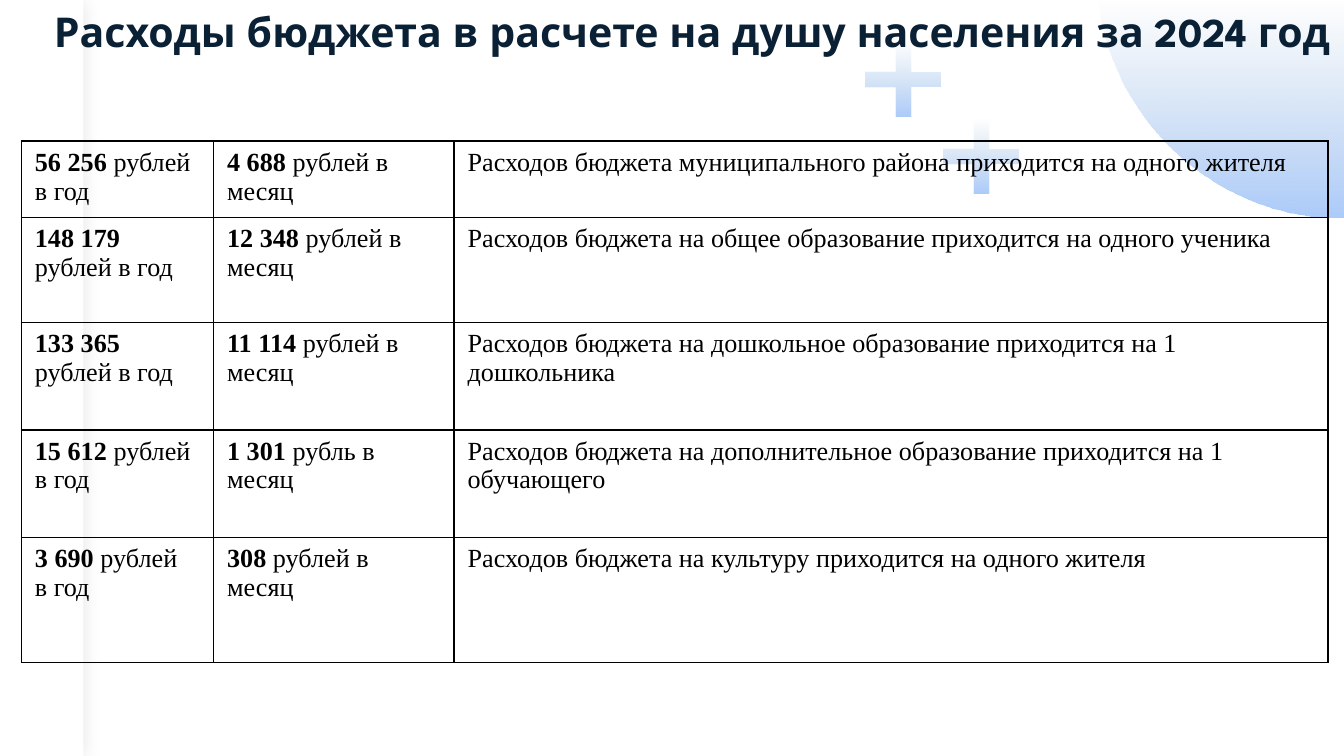
"""Build a slide with a table of budget spending per person for 2024."""
from lxml.etree import SubElement
from pptx import Presentation
from pptx.dml.color import RGBColor
from pptx.enum.shapes import MSO_SHAPE
from pptx.enum.text import MSO_ANCHOR, PP_ALIGN
from pptx.oxml.ns import qn
from pptx.util import Inches, Pt

WHITE = RGBColor(0xFF, 0xFF, 0xFF)
BLACK = RGBColor(0x00, 0x00, 0x00)
NAVY = RGBColor(0x0A, 0x20, 0x35)
PALE_BLUE = RGBColor(0xB4, 0xCC, 0xE7)
SKY_BLUE = RGBColor(0xAC, 0xCB, 0xF9)

ROWS = [
    ("56 256 ", "рублей в год", "4 688 ", "рублей в месяц",
     "Расходов бюджета муниципального района приходится на одного жителя"),
    ("148 179 ", "рублей в год", "12 348 ", "рублей в месяц",
     "Расходов бюджета на общее образование приходится на одного ученика"),
    ("133 365 ", "рублей в год", "11 114 ", "рублей в месяц",
     "Расходов бюджета на дошкольное образование приходится на 1 дошкольника"),
    ("15 612 ", "рублей\nв год", "1 301 ", "рубль в месяц",
     "Расходов бюджета на дополнительное образование приходится на 1 обучающего"),
    ("3 690 ", "рублей\nв год", "308", " рублей в месяц",
     "Расходов бюджета на культуру приходится на одного жителя"),
]
COLUMN_WIDTHS = [1.43, 1.79, 6.5]
ROW_HEIGHTS = [0.57, 0.78, 0.8, 0.8, 0.93]


def fade_in(shape):
    """Fill a shape with blue that fades in from top to bottom."""
    shape.shadow.inherit = False
    shape.line.fill.background()
    shape.fill.gradient()
    shape.fill.gradient_angle = 270
    for stop, color, position in zip(shape.fill.gradient_stops, (PALE_BLUE, SKY_BLUE), (0, 1)):
        stop.color.rgb = color
        stop.position = position
    first_color = next(shape._element.spPr.iter(qn("a:srgbClr")))
    SubElement(first_color, qn("a:alpha"), val="0")


def format_cell(cell, parts):
    """Write (text, bold) parts into a cell and draw its borders."""
    cell.fill.background()
    paragraph = cell.text_frame.paragraphs[0]
    for text, bold in parts:
        for index, line in enumerate(text.split("\n")):
            if index:
                paragraph = cell.text_frame.add_paragraph()
            run = paragraph.add_run()
            run.text = line
            run.font.bold = bold
    for paragraph in cell.text_frame.paragraphs:
        paragraph.font.name = "Times New Roman"
        paragraph.font.size = Pt(14)
        paragraph.font.color.rgb = BLACK
    properties = cell._tc.get_or_add_tcPr()
    for index, side in enumerate(("lnL", "lnR", "lnT", "lnB")):
        border = SubElement(properties, qn(f"a:{side}"), w=str(Pt(1)))
        SubElement(SubElement(border, qn("a:solidFill")), qn("a:srgbClr"), val=str(BLACK))
        properties.insert(index, border)


presentation = Presentation()
presentation.slide_width = Inches(10)
presentation.slide_height = Inches(10) * 9 // 16
slide = presentation.slides.add_slide(presentation.slide_layouts[5])
shapes = slide.shapes

curve = [(9.83, 1.62), (9.02, 1.55), (8.35, 0.94), (8.19, 0.15)]
arc = []
for step in range(41):
    t = step / 40
    weights = [(1 - t) ** 3, 3 * t * (1 - t) ** 2, 3 * t ** 2 * (1 - t), t ** 3]
    arc.append(tuple(Inches(sum(w * p[axis] for w, p in zip(weights, curve))) for axis in (0, 1)))
builder = shapes.build_freeform(Inches(8.17), 0)
builder.add_line_segments([(Inches(10), 0), (Inches(10), Inches(1.62))] + arc, close=True)
fade_in(builder.convert_to_shape())

side_band = shapes.add_shape(MSO_SHAPE.RECTANGLE, 0, 0, Inches(0.62), presentation.slide_height)
side_band.fill.solid()
side_band.fill.fore_color.rgb = WHITE
side_band.line.fill.background()
side_band.shadow.inherit = False
effects = side_band._element.spPr.find(qn("a:effectLst"))
shadow = SubElement(effects, qn("a:outerShdw"), blurRad=str(Pt(10)), dist="0", dir="0")
shadow_color = SubElement(shadow, qn("a:srgbClr"), val=str(BLACK))
SubElement(shadow_color, qn("a:alpha"), val="10000")

for left, top in ((6.44, 0.31), (7.02, 0.88)):
    plus = shapes.add_shape(MSO_SHAPE.CROSS, Inches(left), Inches(top), Inches(0.56), Inches(0.56))
    plus.adjustments[0] = 0.4
    fade_in(plus)

title = shapes.title
shapes._spTree.append(title._element)
title.left, title.top, title.width, title.height = 0, 0, Inches(10), Inches(0.46)
title.text_frame.text = "Расходы бюджета в расчете на душу населения за 2024 год"
title.text_frame.vertical_anchor = MSO_ANCHOR.MIDDLE
paragraph = title.text_frame.paragraphs[0]
paragraph.alignment = PP_ALIGN.RIGHT
paragraph.font.name = "League Spartan"
paragraph.font.size = Pt(22)
paragraph.font.bold = True
paragraph.font.color.rgb = NAVY

table = shapes.add_table(len(ROWS), len(COLUMN_WIDTHS), Inches(0.16), Inches(1.05),
                         Inches(9.72), Inches(3.88)).table
table.first_row = False
table.horz_banding = False
for column, width in zip(table.columns, COLUMN_WIDTHS):
    column.width = Inches(width)
for row, height, values in zip(table.rows, ROW_HEIGHTS, ROWS):
    row.height = Inches(height)
    yearly, yearly_unit, monthly, monthly_unit, description = values
    format_cell(row.cells[0], [(yearly, True), (yearly_unit, False)])
    format_cell(row.cells[1], [(monthly, True), (monthly_unit, False)])
    format_cell(row.cells[2], [(description, False)])

presentation.save("out.pptx")
